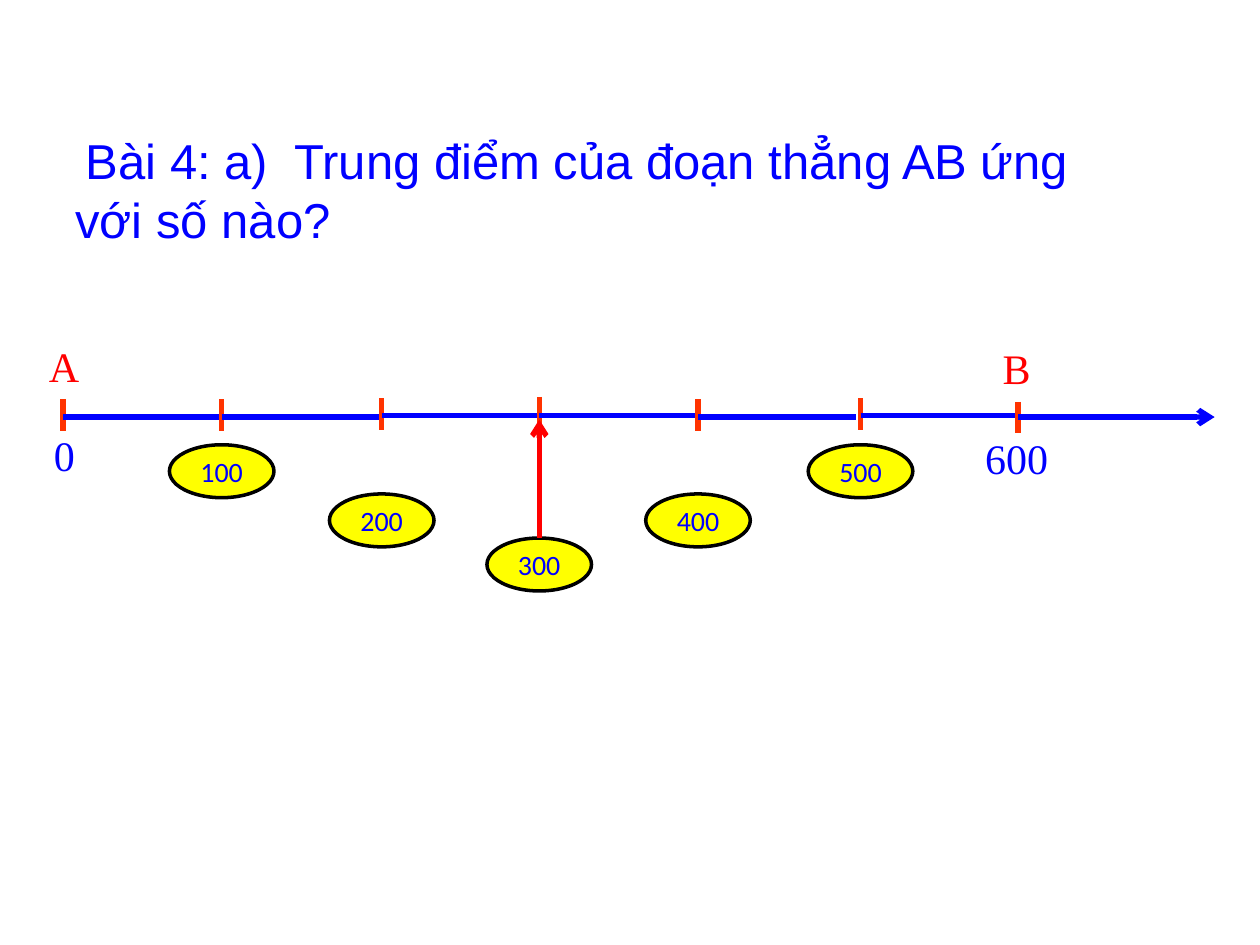
from typing import NamedTuple, Optional

from lxml import etree
from pptx import Presentation
from pptx import util as u
from pptx.dml import color
from pptx.enum import shapes, text
from pptx.oxml import ns

BLUE, RED, ORANGE, YELLOW, BLACK = "0000FF", "FF0000", "FF3300", "FFFF00", "000000"
SERIF = "Times New Roman"
TICK_LENGTH = 0.25
STEP = 1.25
BUBBLE_WIDTH, BUBBLE_HEIGHT = 0.83, 0.42


class Mark(NamedTuple):
    x: float
    axis_y: float
    tick_top: float
    number: str = ""
    bubble_top: Optional[float] = None


class Label(NamedTuple):
    content: str
    left: float
    top: float
    width: float
    hex_color: str


MARKS = [
    Mark(0.5, 3.31, 3.17),
    Mark(1.76, 3.31, 3.17, "100", 3.53),
    Mark(3.03, 3.3, 3.16, "200", 3.92),
    Mark(4.28, 3.3, 3.15, "300", 4.27),
    Mark(5.54, 3.31, 3.17, "400", 3.92),
    Mark(6.83, 3.3, 3.16, "500", 3.53),
    Mark(8.08, 3.31, 3.19),
]
LABELS = [
    Label("A", 0.29, 2.65, 0.42, RED),
    Label("0", 0.33, 3.36, 0.42, BLUE),
    Label("600", 7.72, 3.38, 0.75, BLUE),
    Label("B", 7.86, 2.67, 0.42, RED),
]


def rgb(hex_color: str) -> color.RGBColor:
    return color.RGBColor.from_string(hex_color)


def write_text(frame, content: str, *, size: float, font: str, hex_color: str, align=None):
    paragraph = frame.paragraphs[0]
    paragraph.alignment = align
    run = paragraph.add_run()
    run.text = content
    run.font.size = u.Pt(size)
    run.font.name = font
    run.font.color.rgb = rgb(hex_color)


def add_text_frame(slide, left: float, top: float, width: float, height: float):
    shape = slide.shapes.add_textbox(
        u.Inches(left), u.Inches(top), u.Inches(width), u.Inches(height))
    frame = shape.text_frame
    frame.word_wrap = True
    frame.auto_size = text.MSO_AUTO_SIZE.SHAPE_TO_FIT_TEXT
    return frame


def add_line(slide, start: tuple[float, float], end: tuple[float, float],
             hex_color: str, arrow: bool = False):
    line = slide.shapes.add_connector(
        shapes.MSO_CONNECTOR.STRAIGHT, *map(u.Inches, start + end))
    line.line.color.rgb = rgb(hex_color)
    line.line.width = u.Pt(3)
    properties = line._element.spPr
    if arrow:
        etree.SubElement(properties.find(ns.qn("a:ln")), ns.qn("a:tailEnd"), type="arrow")
    etree.SubElement(properties, ns.qn("a:effectLst"))
    return line


def add_mark(slide, mark: Mark, last: bool):
    add_line(slide, (mark.x, mark.tick_top), (mark.x, mark.tick_top + TICK_LENGTH), ORANGE)
    end_x = 9.64 if last else mark.x + STEP
    add_line(slide, (mark.x, mark.axis_y), (end_x, mark.axis_y), BLUE, arrow=last)


def add_bubble(slide, mark: Mark):
    bubble = slide.shapes.add_shape(
        shapes.MSO_SHAPE.OVAL, u.Inches(mark.x - BUBBLE_WIDTH / 2), u.Inches(mark.bubble_top),
        u.Inches(BUBBLE_WIDTH), u.Inches(BUBBLE_HEIGHT))
    bubble.shadow.inherit = False
    bubble.fill.solid()
    bubble.fill.fore_color.rgb = rgb(YELLOW)
    bubble.line.color.rgb = rgb(BLACK)
    bubble.line.width = u.Pt(2)
    bubble.text_frame.vertical_anchor = text.MSO_ANCHOR.MIDDLE
    write_text(bubble.text_frame, mark.number, size=16, font="Calibri",
               hex_color=BLUE, align=text.PP_ALIGN.CENTER)
    return bubble


def main():
    presentation = Presentation()
    presentation.slide_width = u.Inches(10)
    presentation.slide_height = u.Inches(7.5)
    slide = presentation.slides.add_slide(presentation.slide_layouts[6])

    question = add_text_frame(slide, 0.5, 0.99, 8.58, 1.04)
    write_text(question, " ", size=24, font=SERIF, hex_color=BLACK)
    write_text(question, "Bài 4: a)  Trung điểm của đoạn thẳng AB ứng với số nào?",
               size=28, font="Arial", hex_color=BLUE)

    for mark in MARKS:
        add_mark(slide, mark, last=mark is MARKS[-1])
    for label in LABELS:
        frame = add_text_frame(slide, label.left, label.top, label.width, 0.5)
        write_text(frame, label.content, size=24, font=SERIF, hex_color=label.hex_color)

    bubbles = {mark.number: add_bubble(slide, mark) for mark in MARKS if mark.number}
    midpoint = MARKS[len(MARKS) // 2]
    pointer = add_line(slide, (midpoint.x, midpoint.bubble_top), (midpoint.x, 3.33),
                       RED, arrow=True)
    pointer.begin_connect(bubbles[midpoint.number], 0)

    presentation.save("out.pptx")


if __name__ == "__main__":
    main()
